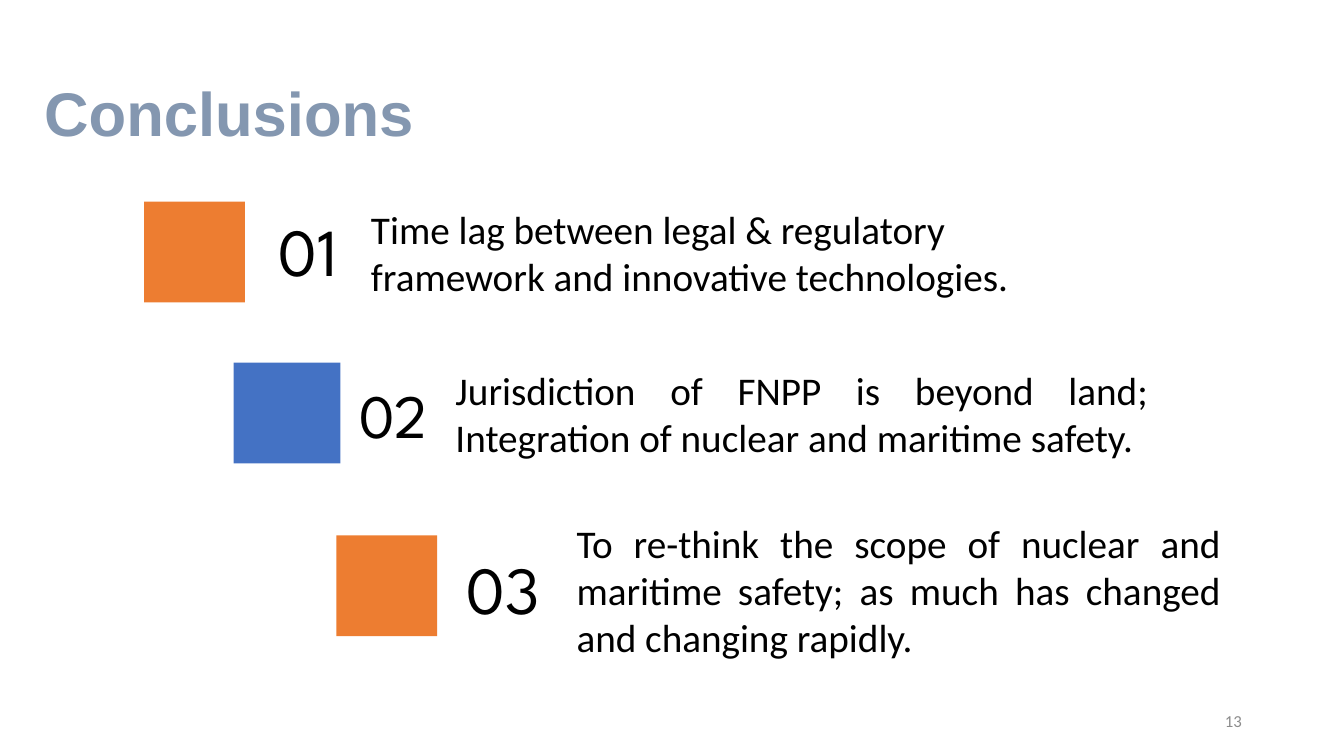
from pptx import Presentation
from pptx.dml.color import RGBColor
from pptx.enum.shapes import MSO_SHAPE as Shape
from pptx.enum.text import MSO_ANCHOR as Anchor, MSO_AUTO_SIZE as AutoSize, PP_ALIGN as Align
from pptx.util import Cm, Pt

ORANGE = RGBColor(0xED, 0x7D, 0x31)
BLUE = RGBColor(0x44, 0x72, 0xC4)
SLATE = RGBColor(0x84, 0x97, 0xB0)
GRAY = RGBColor(0x8C, 0x8C, 0x8C)
BLACK = RGBColor(0, 0, 0)

CONCLUSIONS = [
    (ORANGE, (3.63, 5.08, 2.54, 2.54),
     "01", 48, (6.02, 5.26, 3.51, 2.06),
     "Time lag between legal & regulatory framework and innovative technologies.",
     Align.LEFT, (9.35, 5.16, 16.79, 2.39)),
    (BLUE, (5.89, 9.14, 2.69, 2.54),
     "02", 44, (8.92, 9.5, 2.01, 1.88),
     "Jurisdiction of FNPP is beyond land; Integration of nuclear and maritime safety.",
     Align.JUSTIFY, (11.48, 9.22, 17.45, 2.39)),
    (ORANGE, (8.48, 13.49, 2.54, 2.54),
     "03", 48, (11.46, 13.79, 2.46, 2.06),
     "To re-think the scope of nuclear and maritime safety; as much has changed and changing rapidly.",
     Align.JUSTIFY, (14.53, 13.08, 16.23, 3.58)),
]


class SlideBuilder:
    body_font = "Calibri"
    number_font = "League Spartan"
    title_font = "Arial"

    def __init__(self, presentation):
        self.slide = presentation.slides.add_slide(presentation.slide_layouts[5])

    def set_text(self, shape, text, font, size, color, align):
        frame = shape.text_frame
        frame.word_wrap = True
        frame.auto_size = AutoSize.NONE
        frame.vertical_anchor = Anchor.MIDDLE
        frame.text = text
        paragraph = frame.paragraphs[0]
        paragraph.alignment = align
        paragraph.font.name = font
        paragraph.font.size = Pt(size)
        paragraph.font.color.rgb = color
        return paragraph

    def title(self, text, box):
        shape = self.slide.shapes.title
        shape.left, shape.top, shape.width, shape.height = map(Cm, box)
        paragraph = self.set_text(shape, text, self.title_font, 44, SLATE, Align.LEFT)
        paragraph.font.bold = True
        paragraph.line_spacing = 0.9

    def square(self, color, box):
        shape = self.slide.shapes.add_shape(Shape.RECTANGLE, *map(Cm, box))
        shape.shadow.inherit = False
        shape.fill.solid()
        shape.fill.fore_color.rgb = color
        shape.line.fill.background()

    def text(self, text, box, font, size, align, color=BLACK):
        shape = self.slide.shapes.add_textbox(*map(Cm, box))
        frame = shape.text_frame
        frame.margin_left = frame.margin_right = 0
        frame.margin_top = frame.margin_bottom = 0
        self.set_text(shape, text, font, size, color, align)

    def conclusion(self, color, square_box, number, number_size, number_box,
                   statement, align, statement_box):
        self.square(color, square_box)
        self.text(statement, statement_box, self.body_font, 28, align)
        self.text(number, number_box, self.number_font, number_size, Align.CENTER)

    def page_number(self, number, box):
        self.text(number, box, self.body_font, 12, Align.RIGHT, GRAY)


def main():
    presentation = Presentation()
    presentation.slide_width = Cm(33.87)
    presentation.slide_height = Cm(19.05)
    builder = SlideBuilder(presentation)
    builder.title("Conclusions", (0.86, 1.09, 32.16, 3.68))
    for conclusion in CONCLUSIONS:
        builder.conclusion(*conclusion)
    builder.page_number("13", (23.93, 17.65, 7.37, 1.02))
    presentation.save("out.pptx")


if __name__ == "__main__":
    main()
